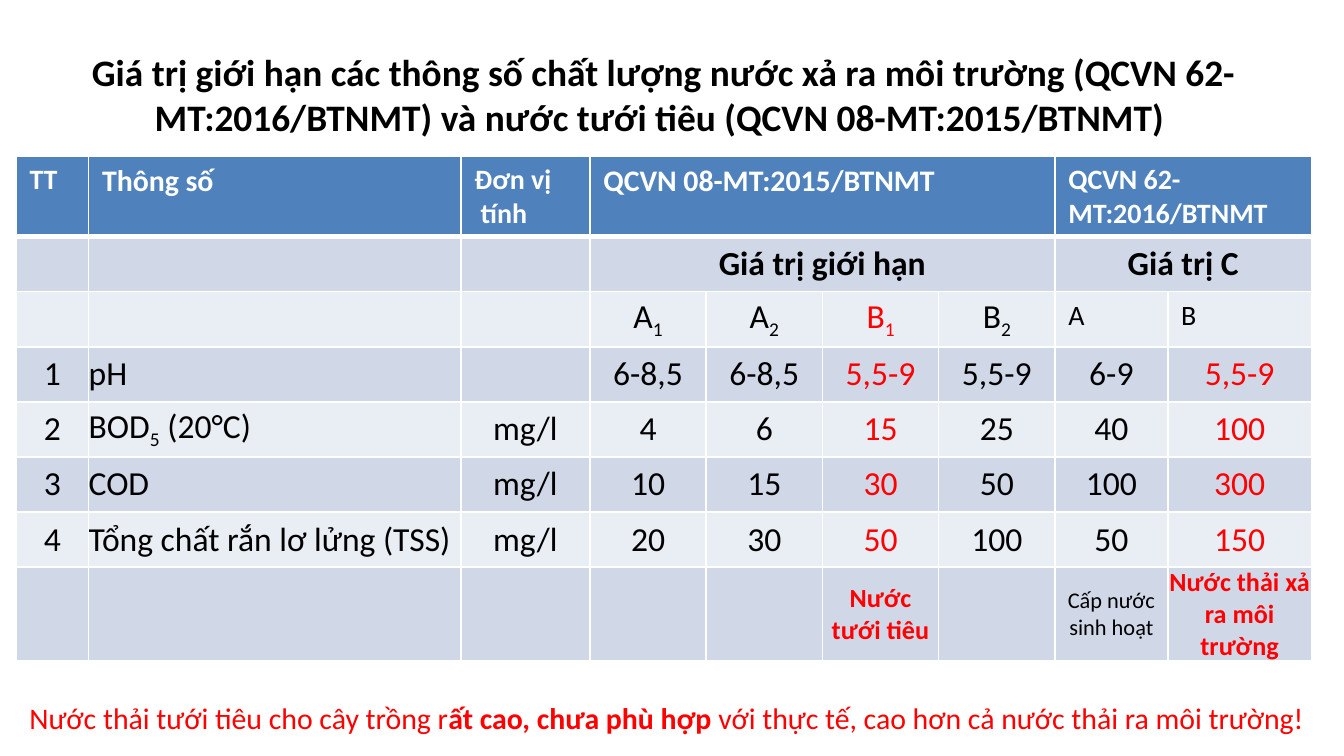
from dataclasses import dataclass

from lxml import etree
from pptx import Presentation
from pptx.dml.color import RGBColor
from pptx.enum.text import MSO_ANCHOR, PP_ALIGN
from pptx.oxml.ns import qn
from pptx.util import Inches, Pt

LEFT, CENTER = PP_ALIGN.LEFT, PP_ALIGN.CENTER
TOP, MIDDLE = MSO_ANCHOR.TOP, MSO_ANCHOR.MIDDLE


@dataclass(frozen=True)
class Theme:
    """Colours, type sizes and line widths of the slide."""
    font: str = "Calibri"
    ink: str = "000000"
    paper: str = "FFFFFF"
    alert: str = "FF0000"
    header: str = "4F81BD"
    bands: tuple = ("E9EDF4", "D0D8E8")
    title: float = 20
    body: float = 18
    heading: float = 16
    label: float = 15
    use: float = 14
    small: float = 12
    rule: float = 1
    header_rule: float = 3


THEME = Theme()
WIDTH = 10
HEIGHT = WIDTH * 9 / 16
MARGIN = 0.12
TABLE_WIDTH, TABLE_HEIGHT = 9.64, 3.94
DETAILS, DISCHARGES = [0.54, 2.77, 0.96], [0.84, 1.07]
CLASS_WIDTH = (TABLE_WIDTH - sum(DETAILS + DISCHARGES)) / 4
COLUMNS = DETAILS + [CLASS_WIDTH] * 4 + DISCHARGES
ROWS = [0.57] + [0.41] * 7
HEADER, LIMITS, CLASSES, USES = 0, 1, 2, 7
PARAMETER, SURFACE, IRRIGATION, DISCHARGE, RELEASE = 1, 3, 5, 7, 8
MERGES = [(row, first, last) for row in (HEADER, LIMITS)
          for first, last in ((SURFACE, 6), (DISCHARGE, RELEASE))]
CONTENT = [
    ["TT", "Thông số", "Đơn vị\n tính", "QCVN 08-MT:2015/BTNMT", "", "", "",
     "QCVN 62-MT:2016/BTNMT", ""],
    ["", "", "", "Giá trị giới hạn", "", "", "", "Giá trị C", ""],
    ["", "", "", "A_1_", "A_2_", "B_1_", "B_2_", "A", "B"],
    ["1", "pH", "", "6-8,5", "6-8,5", "5,5-9", "5,5-9", "6-9", "5,5-9"],
    ["2", "BOD_5_ (20°C)", "mg/l", "4", "6", "15", "25", "40", "100"],
    ["3", "COD", "mg/l", "10", "15", "30", "50", "100", "300"],
    ["4", "Tổng chất rắn lơ lửng (TSS)", "mg/l", "20", "30", "50", "100", "50", "150"],
    ["", "", "", "", "", "Nước tưới tiêu", "", "Cấp nước sinh hoạt",
     "Nước thải xả ra môi trường"],
]


def add_run(paragraph, text, size, color, bold=False, subscript=False):
    """Append one formatted run to a paragraph."""
    run = paragraph.add_run()
    run.text = text
    font = run.font
    font.name, font.size, font.bold = THEME.font, Pt(size), bold
    font.color.rgb = RGBColor.from_string(color)
    if subscript:
        font._element.set("baseline", "-25000")


def add_text(slide, box, runs, size, color, align=LEFT, anchor=TOP):
    """Place a wrapped text box made of (text, bold) runs."""
    frame = slide.shapes.add_textbox(*map(Inches, box)).text_frame
    frame.word_wrap, frame.vertical_anchor = True, anchor
    paragraph = frame.paragraphs[0]
    paragraph.alignment = align
    for text, bold in runs:
        add_run(paragraph, text, size, color, bold)


def add_borders(cell, row):
    """Rule the four sides of a cell, heavier beneath the header row."""
    heavy = {HEADER: "lnB", LIMITS: "lnT"}.get(row)
    properties = cell._tc.get_or_add_tcPr()
    for side in ("lnL", "lnR", "lnT", "lnB"):
        width = THEME.header_rule if side == heavy else THEME.rule
        line = etree.SubElement(properties, qn(f"a:{side}"), w=str(Pt(width)))
        fill = etree.SubElement(line, qn("a:solidFill"))
        etree.SubElement(fill, qn("a:srgbClr"), val=THEME.paper)


def text_style(row, column):
    """Return the size, colour and weight for a table position."""
    if row == HEADER:
        wide = column in (PARAMETER, SURFACE)
        return THEME.heading if wide else THEME.label, THEME.paper, True
    if row == LIMITS:
        return THEME.body, THEME.ink, True
    if row == CLASSES and column >= DISCHARGE:
        return THEME.label, THEME.ink, False
    key = column in (IRRIGATION, RELEASE)
    color = THEME.alert if key else THEME.ink
    if row == USES:
        return THEME.use if key else THEME.small, color, key
    return THEME.body, color, False


def fill_cell(cell, row, column, text):
    """Colour, rule and write one table cell."""
    add_borders(cell, row)
    cell.fill.solid()
    shade = THEME.header if row == HEADER else THEME.bands[row % 2]
    cell.fill.fore_color.rgb = RGBColor.from_string(shade)
    if not text:
        return
    inset = row == HEADER or (row in (LIMITS, CLASSES) and column >= DISCHARGE)
    if not inset:
        cell.vertical_anchor = MIDDLE
        cell.margin_left = cell.margin_right = cell.margin_top = cell.margin_bottom = 0
    centred = row == LIMITS or (not inset and column != PARAMETER)
    size, color, bold = text_style(row, column)
    for index, line in enumerate(text.split("\n")):
        frame = cell.text_frame
        paragraph = frame.add_paragraph() if index else frame.paragraphs[0]
        paragraph.alignment = CENTER if centred else LEFT
        for part, piece in enumerate(line.split("_")):
            if piece:
                add_run(paragraph, piece, size, color, bold, subscript=part % 2 == 1)


def add_limits_table(slide, left, top):
    """Build the table of limit values."""
    box = map(Inches, (left, top, TABLE_WIDTH, TABLE_HEIGHT))
    holder = slide.shapes.add_table(len(ROWS), len(COLUMNS), *box)
    table = holder.table
    table.first_row = table.horz_banding = False
    for column, width in zip(table.columns, COLUMNS):
        column.width = Inches(width)
    for row, height in zip(table.rows, ROWS):
        row.height = Inches(height)
    holder.height = Inches(TABLE_HEIGHT)
    for row, first, last in MERGES:
        table.cell(row, first).merge(table.cell(row, last))
    for row, texts in enumerate(CONTENT):
        for column, text in enumerate(texts):
            fill_cell(table.cell(row, column), row, column, text)


def main():
    """Build and save the slide."""
    deck = Presentation()
    deck.slide_width, deck.slide_height = Inches(WIDTH), Inches(HEIGHT)
    slide = deck.slides.add_slide(deck.slide_layouts[6])
    title = ("Giá trị giới hạn các thông số chất lượng nước xả ra môi trường "
             "(QCVN 62-MT:2016/BTNMT) và nước tưới tiêu (QCVN 08-MT:2015/BTNMT) ")
    add_text(slide, (MARGIN, 0.23, TABLE_WIDTH, 0.94), [(title, True)],
             THEME.title, THEME.ink, CENTER, MIDDLE)
    add_limits_table(slide, MARGIN, 1.16)
    conclusion = [("Nước thải tưới tiêu cho cây trồng r", False),
                  ("ất cao, chưa phù hợp ", True),
                  ("với thực tế, cao hơn cả nước thải ra môi trường!", False)]
    add_text(slide, (MARGIN, 5.16, 9.72, 0.37), conclusion, THEME.heading, THEME.alert)
    deck.save("out.pptx")


if __name__ == "__main__":
    main()
